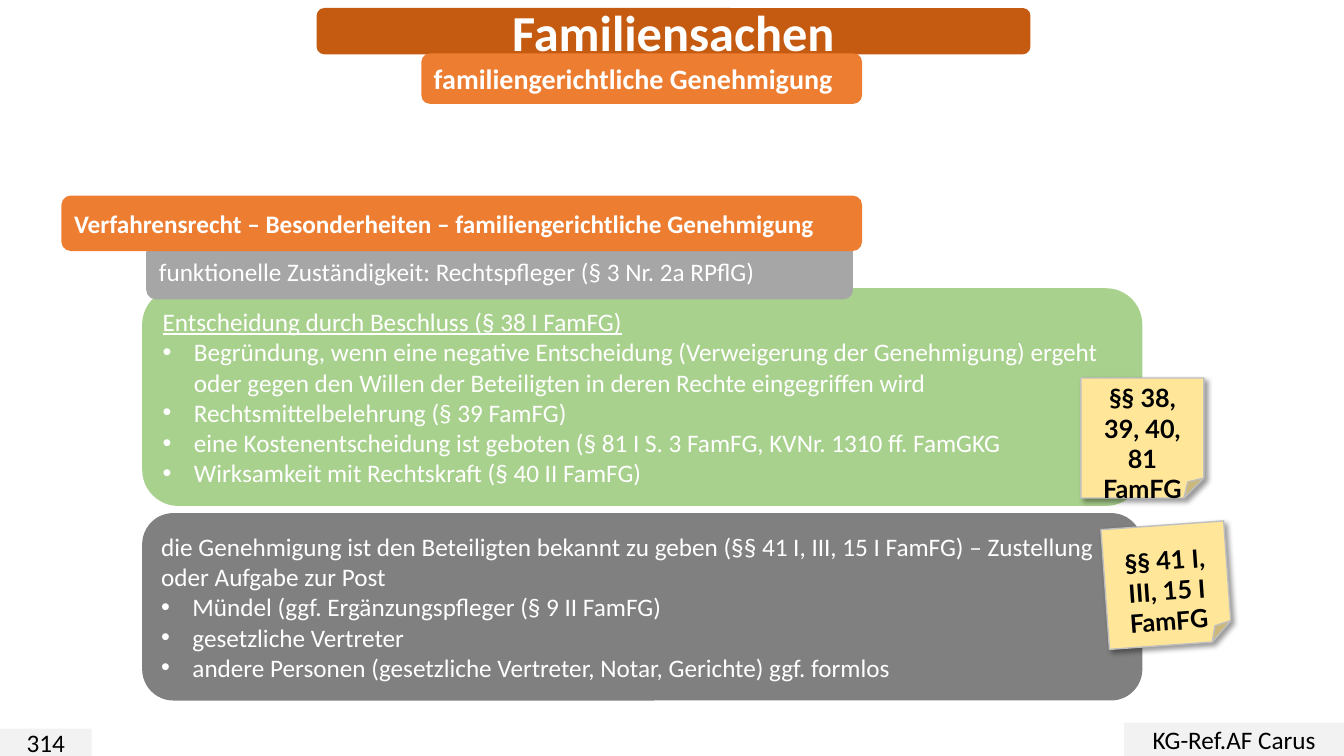
from lxml.etree import SubElement
from pptx import Presentation
from pptx.dml.color import RGBColor
from pptx.enum.shapes import MSO_SHAPE
from pptx.enum.text import MSO_ANCHOR, PP_ALIGN
from pptx.oxml.ns import qn
from pptx.util import Inches, Pt

COLORS = {
    "title": "C55A11", "heading": "ED7D31", "topic": "A6A6A6",
    "decision": "A9D18E", "notice": "808080", "footer": "F2F2F2",
    "note": "FFE699", "note_line": "BFBFBF", "light": "FFFFFF", "dark": "000000",
}
WIDTH, HEIGHT = 13.33, 7.5
PANEL_LEFT, PANEL_WIDTH = 1.41, 9.92
NOTE_SIZE = (1.22, 1.19)
BULLET_INDENT = Inches(0.31)

DECISION = [
    "Entscheidung durch Beschluss (§ 38 I FamFG)",
    "Begründung, wenn eine negative Entscheidung (Verweigerung der Genehmigung) ergeht "
    "oder gegen den Willen der Beteiligten in deren Rechte eingegriffen wird",
    "Rechtsmittelbelehrung (§ 39 FamFG)",
    "eine Kostenentscheidung ist geboten (§ 81 I S. 3 FamFG, KVNr. 1310 ff. FamGKG",
    "Wirksamkeit mit Rechtskraft (§ 40 II FamFG)",
]
NOTICE = [
    "die Genehmigung ist den Beteiligten bekannt zu geben (§§ 41 I, III, 15 I FamFG) – "
    "Zustellung oder Aufgabe zur Post",
    "Mündel (ggf. Ergänzungspfleger (§ 9 II FamFG)",
    "gesetzliche Vertreter",
    "andere Personen (gesetzliche Vertreter, Notar, Gerichte) ggf. formlos",
]


def add_box(slide, kind, box, fill, lines, size=18, bold=False,
            color="light", font="Calibri", align=PP_ALIGN.LEFT):
    """Add a filled shape holding one paragraph per line, centred vertically."""
    sp = slide.shapes.add_shape(kind, *map(Inches, box))
    sp.shadow.inherit = False
    sp.fill.solid()
    sp.fill.fore_color.rgb = RGBColor.from_string(COLORS[fill])
    sp.line.fill.background()
    tf = sp.text_frame
    tf.word_wrap = True
    tf.vertical_anchor = MSO_ANCHOR.MIDDLE
    tf.text = "\n".join(lines)
    for p in tf.paragraphs:
        p.alignment = align
        for r in p.runs:
            r.font.size = Pt(size)
            r.font.bold = bold
            r.font.name = font
            r.font.color.rgb = RGBColor.from_string(COLORS[color])
    return sp


def add_banner(slide, box, fill, text, **style):
    return add_box(slide, MSO_SHAPE.ROUNDED_RECTANGLE, box, fill, [text], **style)


def add_panel(slide, box, fill, lines, underline=False):
    """Add a rounded panel: a lead line followed by bullets."""
    sp = add_box(slide, MSO_SHAPE.ROUNDED_RECTANGLE, box, fill, lines)
    lead, *bullets = sp.text_frame.paragraphs
    lead.runs[0].font.underline = underline
    for p in bullets:
        pPr = p._p.get_or_add_pPr()
        pPr.set("marL", str(BULLET_INDENT))
        pPr.set("indent", str(-BULLET_INDENT))
        SubElement(pPr, qn("a:buFont"), typeface="Arial")
        SubElement(pPr, qn("a:buChar"), char="•")


def add_note(slide, left, top, text, rotation=0):
    """Add a sticky note with a soft shadow."""
    sp = add_box(slide, MSO_SHAPE.FOLDED_CORNER, (left, top, *NOTE_SIZE), "note", [text],
                 bold=True, color="dark", font="Lato", align=PP_ALIGN.CENTER)
    sp.rotation = rotation
    sp.line.color.rgb = RGBColor.from_string(COLORS["note_line"])
    sp.line.width = Pt(1)
    sp.text_frame.margin_top = Inches(0.35)
    effects = sp._element.spPr.find(qn("a:effectLst"))
    shadow = SubElement(effects, qn("a:outerShdw"), blurRad=str(Pt(4)), dist=str(Pt(3)),
                        dir=str(45 * 60000), algn="tl", rotWithShape="0")
    tint = SubElement(shadow, qn("a:srgbClr"), val=COLORS["dark"])
    SubElement(tint, qn("a:alpha"), val="40000")


def add_footer(slide, left, width, height, text):
    add_box(slide, MSO_SHAPE.RECTANGLE, (left, HEIGHT - height, width, height), "footer",
            [text], color="dark", align=PP_ALIGN.CENTER)


def build_slide(prs):
    slide = prs.slides.add_slide(prs.slide_layouts[6])
    add_panel(slide, (PANEL_LEFT, 2.86, PANEL_WIDTH, 2.16), "decision", DECISION,
              underline=True)
    add_banner(slide, (3.14, 0.08, 7.08, 0.46), "title", "Familiensachen",
               size=36, bold=True, align=PP_ALIGN.CENTER)
    add_footer(slide, 0, 0.91, 0.27, "314")
    add_footer(slide, WIDTH - 2.18, 2.18, 0.33, "KG-Ref.AF Carus")
    add_banner(slide, (4.18, 0.53, 4.37, 0.5), "heading",
               "familiengerichtliche Genehmigung", size=20, bold=True)
    add_banner(slide, (1.45, 2.41, 7.01, 0.56), "topic",
               "funktionelle Zuständigkeit: Rechtspfleger (§ 3 Nr. 2a RPflG)")
    add_banner(slide, (0.61, 1.94, 7.94, 0.55), "heading",
               "Verfahrensrecht – Besonderheiten – familiengerichtliche Genehmigung",
               bold=True)
    add_note(slide, 10.72, 3.75, "§§ 38, 39, 40, 81 FamFG")
    add_panel(slide, (PANEL_LEFT, 5.09, PANEL_WIDTH, 1.86), "notice", NOTICE)
    add_note(slide, 10.96, 5.21, "§§ 41 I, III, 15 I FamFG", rotation=355.9)


def main():
    prs = Presentation()
    prs.slide_width, prs.slide_height = Inches(WIDTH), Inches(HEIGHT)
    build_slide(prs)
    prs.save("out.pptx")


if __name__ == "__main__":
    main()
